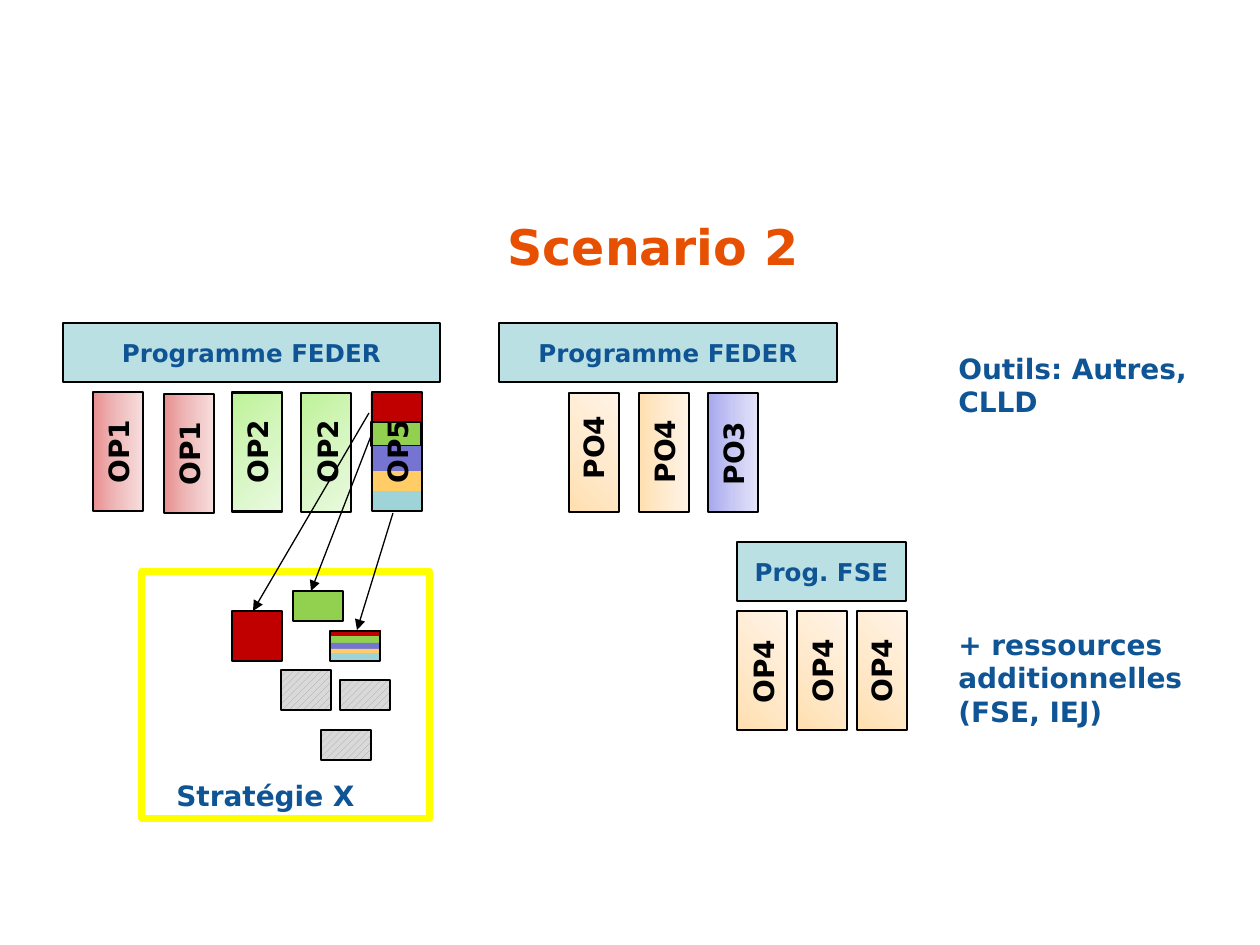
from copy import deepcopy
from pptx import Presentation
from pptx import util as u
from pptx.dml.color import RGBColor
from pptx.enum import dml, shapes, text
from pptx.oxml import ns, xmlchemy

PX = 914400 / 126
FONT = "DejaVu Sans"
BLACK = RGBColor(0, 0, 0)
BLUE = RGBColor(0x0F, 0x54, 0x94)
ORANGE = RGBColor(0xE6, 0x50, 0x00)
YELLOW = RGBColor(0xFF, 0xFF, 0x00)
TEAL = RGBColor(0xBB, 0xE0, 0xE3)
RED = RGBColor(0xC0, 0x00, 0x00)
GREEN = RGBColor(0x92, 0xD0, 0x50)
VIOLET = RGBColor(0x75, 0x75, 0xD1)
AMBER = RGBColor(0xFF, 0xCC, 0x66)
AQUA = RGBColor(0x9E, 0xD3, 0xD7)
GREY = RGBColor(0xD9, 0xD9, 0xD9)
HATCH = RGBColor(0xA6, 0xA6, 0xA6)
ROSE = (RGBColor(0xE9, 0x8F, 0x8F), RGBColor(0xEF, 0xBC, 0xBC), RGBColor(0xF7, 0xDE, 0xDE))
LIME = (RGBColor(0xBE, 0xF2, 0x97), RGBColor(0xD5, 0xF6, 0xC0), RGBColor(0xEA, 0xFA, 0xE0))
PEACH = (RGBColor(0xFF, 0xDF, 0xAF), RGBColor(0xFF, 0xEA, 0xCE), RGBColor(0xFF, 0xF4, 0xE7))
LILAC = (RGBColor(0xA7, 0xA7, 0xF0), RGBColor(0xC8, 0xC8, 0xF4), RGBColor(0xE4, 0xE4, 0xF9))

deck = Presentation()
deck.slide_width = u.Emu(int(1260 * PX))
deck.slide_height = u.Emu(int(945 * PX))
slide = deck.slides.add_slide(deck.slide_layouts[5])


def box(x, y, w, h, fill=None, edge=0.75, ink=BLACK):
    rect = slide.shapes.add_shape(
        shapes.MSO_SHAPE.RECTANGLE, *(int(n * PX) for n in (x, y, w, h)))
    rect.shadow.inherit = False
    if fill is None:
        rect.fill.background()
    else:
        rect.fill.solid()
        rect.fill.fore_color.rgb = fill
    if edge:
        rect.line.color.rgb = ink
        rect.line.width = u.Pt(edge)
    else:
        rect.line.fill.background()
    return rect


def write(shape, words, size, color=BLUE, align=text.PP_ALIGN.CENTER,
          anchor=text.MSO_ANCHOR.MIDDLE, wrap=False):
    frame = shape.text_frame
    frame.text = words
    frame.word_wrap = wrap
    frame.vertical_anchor = anchor
    para = frame.paragraphs[0]
    para.alignment = align
    font = para.font
    font.name, font.size, font.bold = FONT, u.Pt(size), True
    font.color.rgb = color


title = slide.shapes.title
title.left, title.top, title.width, title.height = (
    int(n * PX) for n in (73, 181, 1160, 129))
write(title, "Scenario 2", 28, ORANGE, wrap=True)
title.text_frame.auto_size = text.MSO_AUTO_SIZE.NONE

box(142, 571, 288, 248, edge=4, ink=YELLOW)

for words, x, y, w in (("Programme FEDER", 63, 323, 377),
                       ("Programme FEDER", 499, 323, 338),
                       ("Prog. FSE", 737, 542, 169)):
    write(box(x, y, w, 59, TEAL), words, 14)

for x, y, tones, angle, edge in (
        (93, 393, ROSE, 0, 0), (164, 394, ROSE, 0, 0),
        (232, 393, LIME, 315, 0.75), (301, 393, LIME, 315, 0.75),
        (569, 393, PEACH, 45, 0.75), (639, 393, PEACH, 0, 0.75),
        (708, 393, LILAC, 0, 0.75), (737, 611, PEACH, 45, 0.75),
        (797, 611, PEACH, 45, 0.75), (857, 611, PEACH, 45, 0.75)):
    bar = box(x, y, 50, 119, edge=edge)
    bar.fill.gradient()
    bar.fill.gradient_angle = angle
    stops = bar._element.spPr.find(".//" + ns.qn("a:gsLst"))
    stops.insert(1, deepcopy(stops[0]))
    for stop, tone, spot in zip(bar.fill.gradient_stops, tones, (0, 0.5, 1)):
        stop.color.rgb = tone
        stop.position = spot

box(293, 591, 50, 30, GREEN)
box(232, 611, 50, 50, RED)

for x, y, h in ((281, 670, 40), (340, 680, 30), (321, 730, 30)):
    tile = box(x, y, 50, h)
    tile.fill.patterned()
    tile.fill.pattern = dml.MSO_PATTERN.WIDE_UPWARD_DIAGONAL
    tile.fill.fore_color.rgb = HATCH
    tile.fill.back_color.rgb = GREY

for x, cuts, edges in ((371, (393, 422, 446, 471, 491, 511), (0, 0.75, 0, 0, 0)),
                       (331, (630, 636, 643, 649, 653, 660), (0, 0, 0, 0, 0))):
    for top, end, color, edge in zip(
            cuts, cuts[1:], (RED, GREEN, VIOLET, AMBER, AQUA), edges):
        box(x, top, 50, end - top, color, edge)
box(330, 631, 50, 30)

for ends in ((369, 413, 253, 611), (371, 436, 311, 591), (393, 513, 357, 630)):
    arrow = slide.shapes.add_connector(
        shapes.MSO_CONNECTOR.STRAIGHT, *(int(n * PX) for n in ends))
    arrow.line.color.rgb = BLACK
    arrow.line.width = u.Pt(0.75)
    props = arrow._element.spPr
    tip = xmlchemy.OxmlElement("a:tailEnd")
    tip.set("type", "triangle")
    props.find(ns.qn("a:ln")).append(tip)
    props.append(xmlchemy.OxmlElement("a:effectLst"))

for words, x, y, w, h in (
        ("Stratégie X", 164, 772, 231, 47),
        ("+ ressources additionnelles (FSE, IEJ)", 946, 621, 289, 115),
        ("Outils: Autres, CLLD", 946, 345, 289, 81)):
    note = slide.shapes.add_textbox(*(int(n * PX) for n in (x, y, w, h)))
    write(note, words, 16, align=text.PP_ALIGN.LEFT,
          anchor=text.MSO_ANCHOR.TOP, wrap=True)

for words, x, y, edge in (
        ("OP1", 93, 392, 0.75), ("OP1", 164, 394, 0.75),
        ("OP2", 232, 392, 0.75), ("OP2", 302, 392, 0),
        ("PO4", 568, 388, 0), ("PO4", 639, 392, 0), ("PO3", 708, 394, 0),
        ("OP5", 372, 392, 1.5),
        ("OP4", 738, 612, 0), ("OP4", 797, 611, 0), ("OP4", 856, 611, 0)):
    label = box(x, y, 50, 119, edge=edge)
    write(label, words, 16, BLACK)
    label.text_frame._txBody.bodyPr.set("vert", "vert270")

deck.save("out.pptx")
